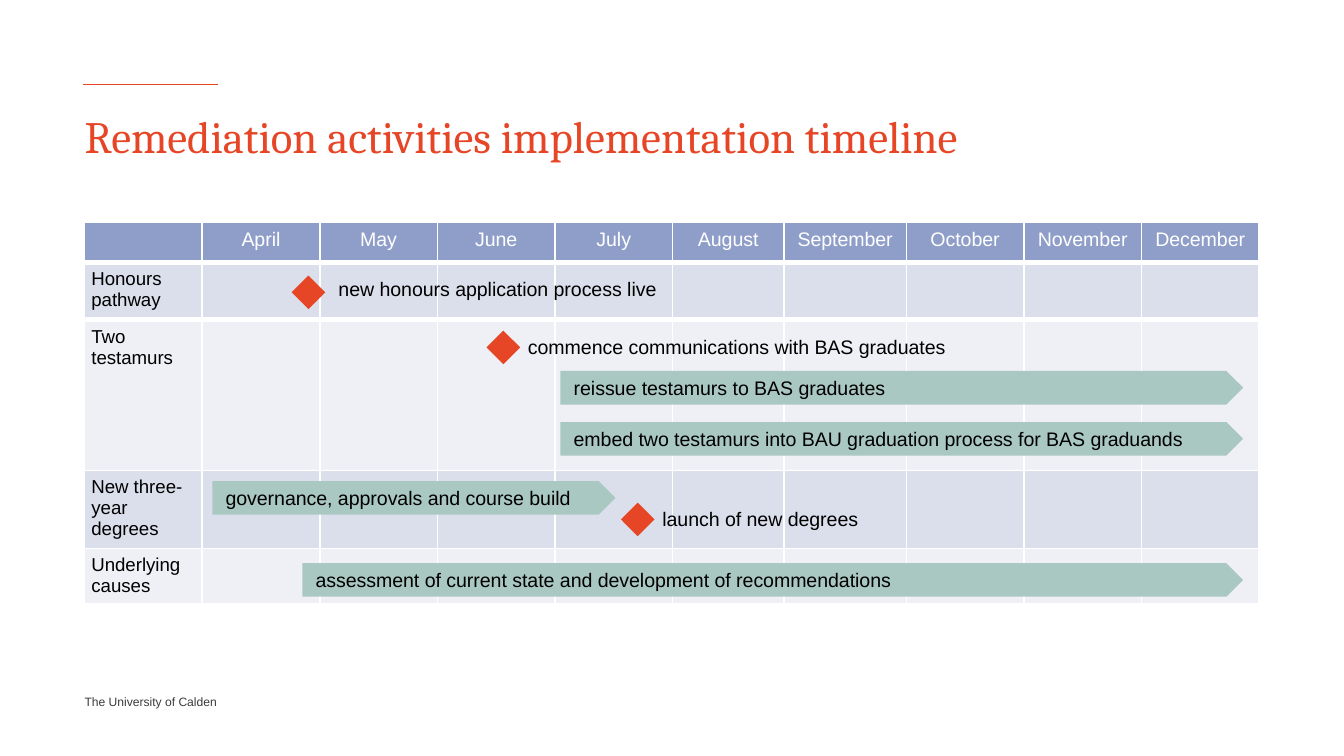
from dataclasses import dataclass

from pptx import Presentation
from pptx.dml.color import RGBColor
from pptx.enum.shapes import MSO_CONNECTOR, MSO_SHAPE
from pptx.enum.text import MSO_ANCHOR, PP_ALIGN
from pptx.oxml.ns import qn
from pptx.util import Inches, Pt
from lxml import etree

DIAMOND, ARROW = MSO_SHAPE.DIAMOND, MSO_SHAPE.RIGHT_ARROW
STRAIGHT = MSO_CONNECTOR.STRAIGHT
TOP, MIDDLE = MSO_ANCHOR.TOP, MSO_ANCHOR.MIDDLE
LEFT, CENTER = PP_ALIGN.LEFT, PP_ALIGN.CENTER

ORANGE, GREEN, BLACK, WHITE, GREY = "E64626", "AAC8C2", "000000", "FFFFFF", "3C3C3B"
HEADER_FILL, BAND_FILLS = "8F9EC9", ("DBDFEB", "EEF0F5")
MARGIN, CONTENT_WIDTH = 0.63, 8.74
MARK_SIZE = 0.25
LABEL_SIZE = 10.5

MONTHS = ("April", "May", "June", "July", "August", "September",
          "October", "November", "December")
AUGUST_WIDTH, SEPTEMBER_WIDTH = 0.83, 0.91
USUAL_WIDTH = (CONTENT_WIDTH - AUGUST_WIDTH - SEPTEMBER_WIDTH) / 8
COLUMN_WIDTHS = (USUAL_WIDTH,) * 5 + (AUGUST_WIDTH, SEPTEMBER_WIDTH) + (USUAL_WIDTH,) * 3


@dataclass(frozen=True)
class Workstream:
    name: str
    height: float


@dataclass(frozen=True)
class Milestone:
    label: str
    left: float
    top: float
    label_left: float
    label_top: float


@dataclass(frozen=True)
class Activity:
    label: str
    left: float
    top: float
    end: float


WORKSTREAMS = (
    Workstream("Honours pathway", 0.43),
    Workstream("Two testamurs", 1.12),
    Workstream("New three- year degrees", 0.51),
    Workstream("Underlying causes", 0.4),
)
MILESTONES = (
    Milestone("new honours application process live", 2.17, 2.05, 2.42, 2.01),
    Milestone("commence communications with BAS graduates", 3.62, 2.46, 3.83, 2.44),
    Milestone("launch of new degrees", 4.62, 3.74, 4.83, 3.72),
)
ACTIVITIES = (
    Activity("reissue testamurs to BAS graduates", 4.17, 2.76, 9.25),
    Activity("embed two testamurs into BAU graduation process for BAS graduands",
             4.17, 3.14, 9.25),
    Activity("governance, approvals and course build", 1.58, 3.58, 4.58),
    Activity("assessment of current state and development of recommendations",
             2.25, 4.19, 9.25),
)


def rgb(value: str) -> RGBColor:
    return RGBColor.from_string(value)


def write(frame, text: str, size: float, color: str, font="Arial", align=LEFT) -> None:
    frame.text = text
    paragraph = frame.paragraphs[0]
    paragraph.alignment = align
    paragraph.font.name = font
    paragraph.font.size = Pt(size)
    paragraph.font.bold = False
    paragraph.font.color.rgb = rgb(color)


def set_insets(owner, inset: float) -> None:
    """Set equal margins on a text frame or a table cell."""
    owner.margin_left = owner.margin_right = Inches(inset)
    owner.margin_top = owner.margin_bottom = Inches(inset)


def add_label(slide, text: str, left: float, top: float, width: float, height: float,
              size=LABEL_SIZE, color=BLACK):
    box = slide.shapes.add_textbox(Inches(left), Inches(top), Inches(width), Inches(height))
    box.text_frame.word_wrap = True
    write(box.text_frame, text, size, color)
    return box.text_frame


def add_mark(slide, kind, left: float, top: float, width: float, color: str):
    mark = slide.shapes.add_shape(kind, Inches(left), Inches(top), Inches(width),
                                  Inches(MARK_SIZE))
    mark.shadow.inherit = False
    mark.fill.solid()
    mark.fill.fore_color.rgb = rgb(color)
    mark.line.fill.background()
    return mark


def add_milestone(slide, milestone: Milestone) -> None:
    add_mark(slide, DIAMOND, milestone.left, milestone.top, MARK_SIZE, ORANGE)
    add_label(slide, milestone.label, milestone.label_left, milestone.label_top, 4.42, 0.29)


def add_activity(slide, activity: Activity) -> None:
    bar = add_mark(slide, ARROW, activity.left, activity.top,
                   activity.end - activity.left, GREEN)
    bar.adjustments[0], bar.adjustments[1] = 1, 0.5
    bar.text_frame.vertical_anchor = MIDDLE
    write(bar.text_frame, activity.label, LABEL_SIZE, BLACK)


def fill_cell(cell, text: str, fill: str, size: float, color: str, align) -> None:
    cell.fill.solid()
    cell.fill.fore_color.rgb = rgb(fill)
    set_insets(cell, 0.05)
    cell.margin_bottom = Inches(0.03)
    write(cell.text_frame, text, size, color, align=align)


def set_border(cell, side: str, points: float, color: str) -> None:
    """Draw one cell edge; borders precede the fill in the cell properties."""
    border = etree.Element(qn(f"a:{side}"), w=str(Pt(points)))
    fill = etree.SubElement(border, qn("a:solidFill"))
    etree.SubElement(fill, qn("a:srgbClr"), val=color)
    cell._tc.get_or_add_tcPr().insert(0, border)


def add_calendar(slide) -> None:
    heights = (0.3,) + tuple(stream.height for stream in WORKSTREAMS)
    calendar = slide.shapes.add_table(
        len(heights), len(COLUMN_WIDTHS), Inches(MARGIN), Inches(1.65),
        Inches(CONTENT_WIDTH), Inches(sum(heights))).table
    for column, width in zip(calendar.columns, COLUMN_WIDTHS):
        column.width = Inches(width)
    for row, height in zip(calendar.rows, heights):
        row.height = Inches(height)
    for index, month in enumerate(("",) + MONTHS):
        header = calendar.cell(0, index)
        fill_cell(header, month, HEADER_FILL, LABEL_SIZE, WHITE, CENTER)
        set_border(header, "lnB", 3, WHITE)
        set_border(calendar.cell(1, index), "lnT", 3, WHITE)
    for index, stream in enumerate(WORKSTREAMS):
        names = (stream.name,) + ("",) * len(MONTHS)
        for cell, name in zip(calendar.rows[index + 1].cells, names):
            fill_cell(cell, name, BAND_FILLS[index % 2], 10, BLACK, LEFT)


def add_accent_rule(slide) -> None:
    rule = slide.shapes.add_connector(STRAIGHT, Inches(0.62), Inches(0.63),
                                      Inches(1.62), Inches(0.63))
    rule.line.color.rgb = rgb(ORANGE)
    rule.line.width = Pt(0.75)
    etree.SubElement(rule._element.spPr, qn("a:effectLst"))


def set_title(slide, text: str) -> None:
    title = slide.shapes.title
    title.left, title.top = Inches(MARGIN), Inches(0.81)
    title.width, title.height = Inches(CONTENT_WIDTH), Inches(0.4)
    title.text_frame.vertical_anchor = TOP
    set_insets(title.text_frame, 0)
    write(title.text_frame, text, 24, ORANGE, font="Cambria")


def main() -> None:
    deck = Presentation()
    deck.slide_width = Inches(10)
    deck.slide_height = deck.slide_width * 9 // 16
    slide = deck.slides.add_slide(deck.slide_layouts[5])

    footer = add_label(slide, "The University of Calden", MARGIN, 5.17, 1.03, 0.13, 6.5, GREY)
    set_insets(footer, 0)
    add_accent_rule(slide)
    set_title(slide, "Remediation activities implementation timeline")
    add_calendar(slide)
    for milestone in MILESTONES:
        add_milestone(slide, milestone)
    for activity in ACTIVITIES:
        add_activity(slide, activity)
    deck.save("out.pptx")


if __name__ == "__main__":
    main()
